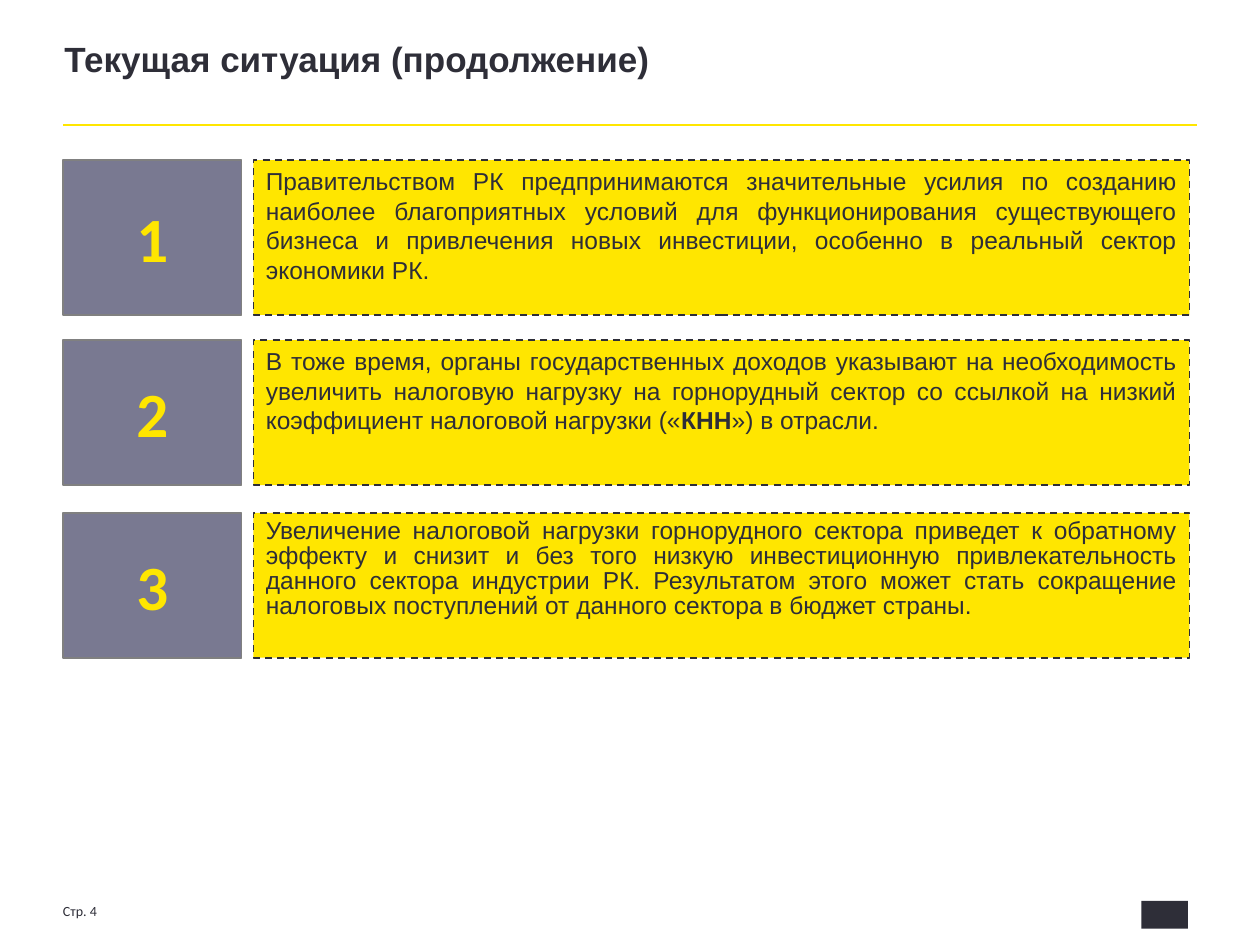
from lxml import etree
from pptx import Presentation
from pptx.dml.color import RGBColor
from pptx.enum.dml import MSO_LINE
from pptx.enum.shapes import MSO_CONNECTOR, MSO_SHAPE
from pptx.enum.text import MSO_ANCHOR, MSO_AUTO_SIZE, PP_ALIGN
from pptx.oxml.ns import qn
from pptx.util import Cm, Pt

COLORS = {"yellow": "FFE600", "dark": "2E2E38", "violet": "797991", "gray": "808080"}
MARGIN = 1.27
TITLE_FORMAT = {"name": "Arial", "size": Pt(20), "bold": True}
BODY_FORMAT = {"name": "Arial", "size": Pt(14), "bold": False}
NUMBER_FORMAT = {"name": "Calibri", "size": Pt(36), "bold": True}
FOOTER_FORMAT = {"name": "Calibri", "size": Pt(8), "bold": False}
TIGHT = {"line_spacing": 0.85, "space_after": Pt(6)}
ROWS = [
    (3.23, 3.12, {}, [
        "Правительством РК предпринимаются значительные усилия по созданию "
        "наиболее благоприятных условий для функционирования существующего "
        "бизнеса и привлечения новых инвестиции, особенно в реальный сектор "
        "экономики РК."]),
    (6.86, 2.92, {}, [
        "В тоже время, органы государственных доходов указывают на необходимость "
        "увеличить налоговую нагрузку на горнорудный сектор со ссылкой на низкий "
        "коэффициент налоговой нагрузки («", "КНН", "») в отрасли."]),
    (10.34, 2.92, TIGHT, [
        "Увеличение налоговой нагрузки горнорудного сектора приведет к обратному "
        "эффекту и снизит и без того низкую инвестиционную привлекательность "
        "данного сектора индустрии РК. Результатом этого может стать сокращение "
        "налоговых поступлений от данного сектора в бюджет страны."]),
]


def apply(target, values):
    """Set every attribute in values on the target."""
    for name, value in values.items():
        setattr(target, name, value)


def color(name):
    """Return the named palette colour."""
    return RGBColor.from_string(COLORS[name])


def write(shape, pieces, font, ink, paragraph_format, frame_format):
    """Write one paragraph of runs, every second run being bold."""
    apply(shape.text_frame, {"word_wrap": True, **frame_format})
    paragraph = shape.text_frame.paragraphs[0]
    apply(paragraph, paragraph_format)
    for index, piece in enumerate(pieces):
        run = paragraph.add_run()
        run.text = piece
        apply(run.font, font)
        run.font.color.rgb = color(ink)
        if index % 2:
            run.font.bold = True


def add_box(slide, box, fill, line=None):
    """Add a flat rectangle, with an outline if a line colour is given."""
    shape = slide.shapes.add_shape(MSO_SHAPE.RECTANGLE, *map(Cm, box))
    shape.shadow.inherit = False
    shape.fill.solid()
    shape.fill.fore_color.rgb = color(fill)
    if line:
        shape.line.color.rgb = color(line)
        shape.line.width = Pt(1)
    else:
        shape.line.fill.background()
    return shape


def add_header(slide, left, top, width):
    """Format the title and draw the rule below it."""
    title = slide.shapes.title
    apply(title, {"left": Cm(left + 0.03), "top": Cm(top), "width": Cm(width), "height": Cm(1.65)})
    insets = dict.fromkeys(("margin_left", "margin_top", "margin_right", "margin_bottom"), 0)
    write(title, ["Текущая ситуация (продолжение)"], TITLE_FORMAT, "dark",
          {"alignment": PP_ALIGN.LEFT, "line_spacing": 0.85},
          {"vertical_anchor": MSO_ANCHOR.TOP, "auto_size": MSO_AUTO_SIZE.NONE, **insets})
    rule_top = Cm(top + 1.63)
    rule = slide.shapes.add_connector(
        MSO_CONNECTOR.STRAIGHT, Cm(left), rule_top, Cm(left + width), rule_top)
    rule.line.color.rgb = color("yellow")
    rule.line.width = Pt(1.5)
    etree.SubElement(rule._element.spPr, qn("a:effectLst"))


def add_row(slide, left, top, height, number, pieces, paragraph_format):
    """Add a numbered tile and the dashed statement box beside it."""
    tile = add_box(slide, (left, top, 3.6, height), "violet", "gray")
    write(tile, [str(number)], NUMBER_FORMAT, "yellow",
          {"alignment": PP_ALIGN.CENTER}, {"vertical_anchor": MSO_ANCHOR.MIDDLE})
    statement = add_box(slide, (left + 3.84, top, 18.87, height), "yellow", "dark")
    statement.line.dash_style = MSO_LINE.DASH
    write(statement, pieces, BODY_FORMAT, "dark",
          {"alignment": PP_ALIGN.JUSTIFY, **paragraph_format},
          {"vertical_anchor": MSO_ANCHOR.TOP})


def add_footer(slide, left, top, width):
    """Add the page label and a plain block at the right end."""
    label = slide.shapes.add_textbox(Cm(left - 0.25), Cm(top), Cm(2.5), Cm(0.5))
    write(label, ["Стр. 4"], FOOTER_FORMAT, "dark", {},
          {"vertical_anchor": MSO_ANCHOR.MIDDLE})
    add_box(slide, (left + width - 1.12, top + 0.05, 0.94, 0.56), "dark")


def main():
    """Build and save the slide."""
    presentation = Presentation()
    apply(presentation, {"slide_width": Cm(25.4), "slide_height": Cm(19.05)})
    slide = presentation.slides.add_slide(presentation.slide_layouts[5])
    width = 25.4 - 2 * MARGIN
    add_header(slide, MARGIN, 0.89, width)
    for number, (top, height, paragraph_format, pieces) in enumerate(ROWS, 1):
        add_row(slide, MARGIN, top, height, number, pieces, paragraph_format)
    add_footer(slide, MARGIN, 18.11, width)
    presentation.save("out.pptx")


if __name__ == "__main__":
    main()
